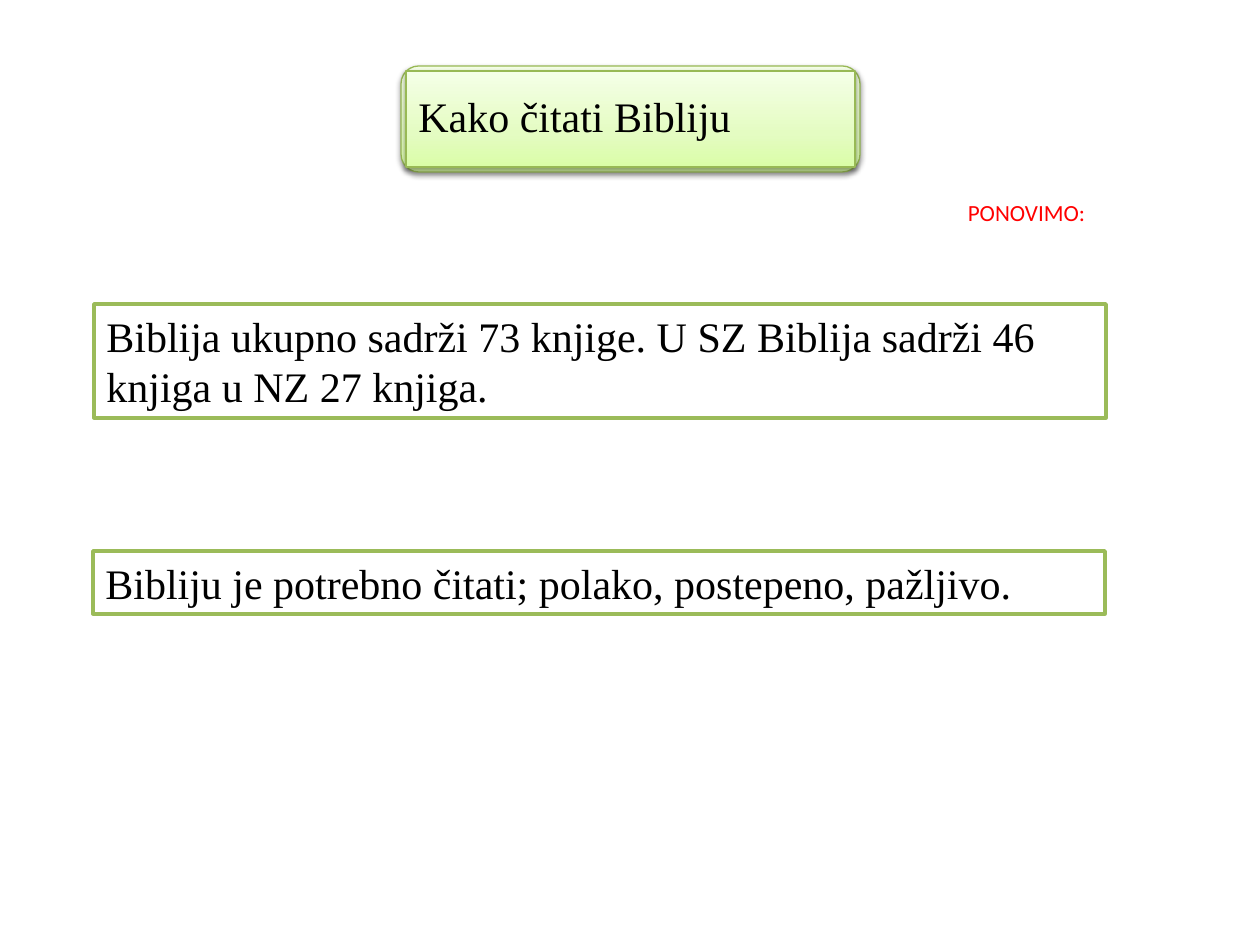
from lxml.etree import SubElement
from pptx import Presentation
from pptx.dml.color import RGBColor
from pptx.enum.shapes import MSO_SHAPE as Shape
from pptx.enum.text import MSO_ANCHOR as Anchor, MSO_AUTO_SIZE as AutoSize, PP_ALIGN as Align
from pptx.oxml.ns import qn
from pptx.util import Emu, Pt

PX = 914400 / 126
COLORS = {"ink": "000000", "accent": "FF0000", "paper": "FFFFFF",
          "frame": "9BBB59", "title_line": "98B955"}
TITLE_STOPS = [(0, "DAFDA7"), (35, "E4FCC2"), (100, "F5FFE7")]

TITLE = "Kako čitati Bibliju"
TITLE_FRAME = (401, 66, 459, 106)
TITLE_INSET = 5
HEADING = ("PONOVIMO:", (793, 192, 467, 40))
STATEMENTS = [
    ("Biblija ukupno sadrži 73 knjige. U SZ Biblija sadrži 46 knjiga u NZ 27 knjiga.",
     (94, 304, 1012, 114)),
    ("Bibliju je potrebno čitati; polako, postepeno, pažljivo.",
     (93, 551, 1012, 63)),
]


def px(value):
    return Emu(round(value * PX))


def rgb(name):
    return RGBColor.from_string(COLORS[name])


def write(shape, text, font="Times New Roman", size=24, color="ink", align=Align.LEFT):
    frame = shape.text_frame
    frame.word_wrap = True
    para = frame.paragraphs[0]
    para.alignment = align
    span = para.add_run()
    span.text = text
    span.font.name = font
    span.font.size = Pt(size)
    span.font.color.rgb = rgb(color)
    return frame


def add_box(shapes, kind, place, line, width):
    box = shapes.add_shape(kind, *map(px, place))
    box.shadow.inherit = False
    box.line.color.rgb = rgb(line)
    box.line.width = Pt(width)
    return box


def add_title_panel(shapes, kind, place):
    """Add a panel with a vertical green gradient and a soft shadow below."""
    panel = add_box(shapes, kind, place, "title_line", 0.75)
    panel.fill.gradient()
    panel.fill.gradient_angle = 90
    properties = panel._element.spPr
    stops = properties.find(qn("a:gradFill")).find(qn("a:gsLst"))
    for stop in list(stops):
        stops.remove(stop)
    for percent, color in TITLE_STOPS:
        stop = SubElement(stops, qn("a:gs"), pos=str(percent * 1000))
        SubElement(stop, qn("a:srgbClr"), val=color)
    shadow = SubElement(properties.find(qn("a:effectLst")), qn("a:outerShdw"),
                        blurRad=str(Pt(3.1)), dist=str(Pt(1.6)),
                        dir="5400000", rotWithShape="0")
    tint = SubElement(shadow, qn("a:srgbClr"), val=COLORS["ink"])
    SubElement(tint, qn("a:alpha"), val="38000")
    return panel


def main():
    deck = Presentation()
    deck.slide_width, deck.slide_height = px(1260), px(945)
    page = deck.slides.add_slide(deck.slide_layouts[6])

    title = page.shapes.add_group_shape()
    add_title_panel(title.shapes, Shape.ROUNDED_RECTANGLE, TITLE_FRAME)
    left, top, width, height = TITLE_FRAME
    inner = (left + TITLE_INSET, top + TITLE_INSET,
             width - 2 * TITLE_INSET, height - 2 * TITLE_INSET)
    frame = write(add_title_panel(title.shapes, Shape.RECTANGLE, inner), TITLE)
    frame.vertical_anchor = Anchor.MIDDLE
    frame.margin_top = frame.margin_bottom = frame.margin_left
    frame.paragraphs[0].line_spacing = 0.9

    for text, place in STATEMENTS:
        box = add_box(page.shapes, Shape.RECTANGLE, place, "frame", 2)
        box.fill.solid()
        box.fill.fore_color.rgb = rgb("paper")
        frame = write(box, text)
        frame.vertical_anchor = Anchor.TOP
        frame.auto_size = AutoSize.SHAPE_TO_FIT_TEXT

    text, place = HEADING
    write(page.shapes.add_textbox(*map(px, place)), text,
          "Calibri", 13.2, "accent", Align.CENTER)

    deck.save("out.pptx")


if __name__ == "__main__":
    main()
